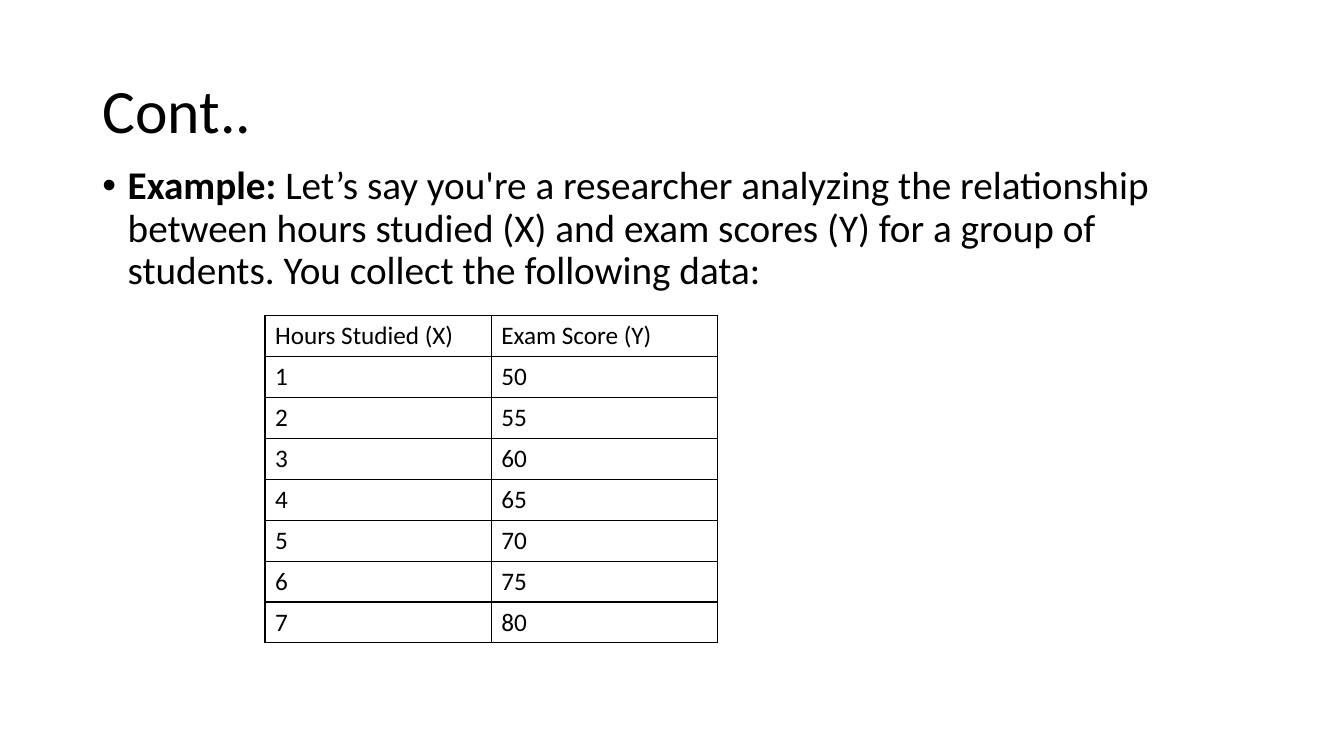
from lxml import etree
from pptx import Presentation
from pptx.dml.color import RGBColor
from pptx.enum.text import MSO_ANCHOR
from pptx.oxml.ns import qn
from pptx.util import Cm, Pt

MIDDLE = MSO_ANCHOR.MIDDLE
BLACK = "000000"
LEFT, WIDTH = Cm(2.33), Cm(29.21)
COLUMN_WIDTH, ROW_HEIGHT = Cm(5.7), Cm(1.03)


def color(hex_string):
    return RGBColor.from_string(hex_string)


def style(paragraph, size):
    paragraph.font.name = "Calibri"
    paragraph.font.size = Pt(size)
    paragraph.font.color.rgb = color(BLACK)


deck = Presentation()
deck.slide_width, deck.slide_height = Cm(33.87), Cm(19.05)
page = deck.slides.add_slide(deck.slide_layouts[6])

# Title
title_box = page.shapes.add_textbox(LEFT, Cm(1.01), WIDTH, Cm(3.68))
title_box.text_frame.word_wrap = True
title_box.text_frame.vertical_anchor = MIDDLE
title = title_box.text_frame.paragraphs[0]
title.text = "Cont.."
title.line_spacing = 0.9
style(title, 44)

# Bulleted example
body_box = page.shapes.add_textbox(LEFT, Cm(4.06), WIDTH, Cm(13.1))
body_box.text_frame.word_wrap = True
example = body_box.text_frame.paragraphs[0]
example.line_spacing = 0.9
example.space_before = Pt(10)
style(example, 28)
label = example.add_run()
label.text = "Example: "
label.font.bold = True
example.add_run().text = (
    "Let’s say you're a researcher analyzing the relationship between hours "
    "studied (X) and exam scores (Y) for a group of students. "
    "You collect the following data:"
)
properties = example._p.get_or_add_pPr()
properties.set("marL", str(Cm(0.64)))
properties.set("indent", str(Cm(-0.64)))
bullet_font = etree.Element(qn("a:buFont"), typeface="Arial")
bullet = etree.Element(qn("a:buChar"), char="•")
default_run = properties.find(qn("a:defRPr"))
default_run.addprevious(bullet_font)
default_run.addprevious(bullet)

# Hours and scores
rows = [("Hours Studied (X)", "Exam Score (Y)")]
rows += [(str(hours), str(45 + 5 * hours)) for hours in range(1, 8)]
table = page.shapes.add_table(
    len(rows), 2, Cm(6.68), Cm(7.96), 2 * COLUMN_WIDTH, len(rows) * ROW_HEIGHT
).table
table.first_row = False
table.horz_banding = False
for column in table.columns:
    column.width = COLUMN_WIDTH
for row_index, values in enumerate(rows):
    table.rows[row_index].height = ROW_HEIGHT
    for column_index, value in enumerate(values):
        cell = table.cell(row_index, column_index)
        cell.text = value
        style(cell.text_frame.paragraphs[0], 18)
        cell_properties = cell._tc.get_or_add_tcPr()
        for side in ("lnL", "lnR", "lnT", "lnB"):
            border = etree.SubElement(cell_properties, qn(f"a:{side}"), w=str(Pt(1)))
            border_fill = etree.SubElement(border, qn("a:solidFill"))
            etree.SubElement(border_fill, qn("a:srgbClr"), val=BLACK)
        cell.fill.background()

deck.save("out.pptx")
